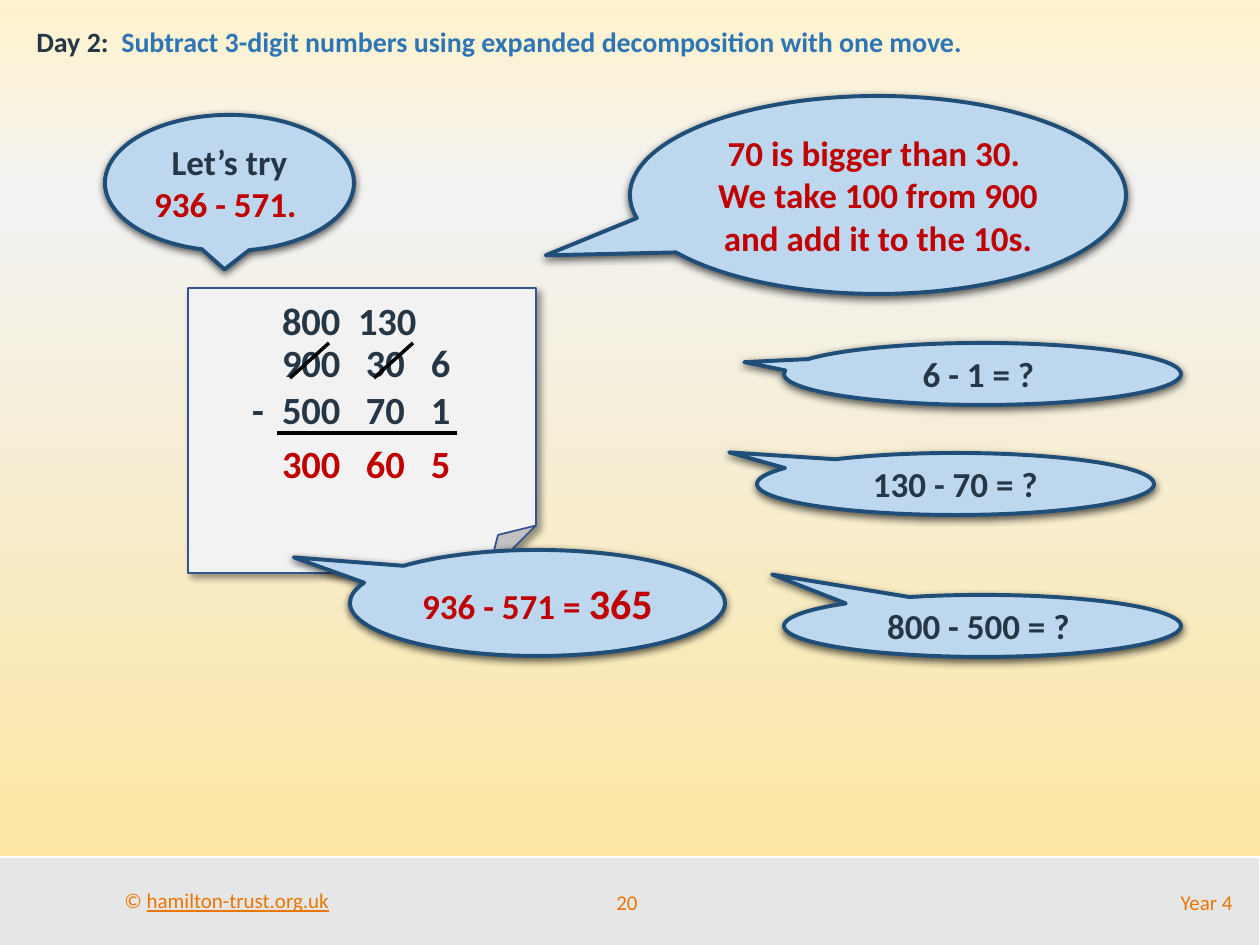
import lxml.etree
import pptx
import pptx.dml.color
import pptx.enum.shapes
import pptx.enum.text
import pptx.oxml.ns
import pptx.util

EMU_PER_PX = 914400 / 126
DARK, RED, BLUE, ORANGE = "253746", "C00000", "2E75B6", "EA7600"
ALIGN = pptx.enum.text.PP_ALIGN
ANCHOR = pptx.enum.text.MSO_ANCHOR
SHAPE = pptx.enum.shapes.MSO_SHAPE


def px(length):
    return pptx.util.Emu(round(length * EMU_PER_PX))


def rgb(color):
    return pptx.dml.color.RGBColor.from_string(color)


def add_xml(parent, tag, **attributes):
    values = {name: str(value) for name, value in attributes.items()}
    return lxml.etree.SubElement(parent, pptx.oxml.ns.qn(tag), values)


def add_run(paragraph, text, size=20, color=DARK, bold=True, underline=None):
    run = paragraph.add_run()
    run.text = text
    font = run.font
    font.name, font.size, font.bold = "Calibri", pptx.util.Pt(size), bold
    font.underline = underline
    font.color.rgb = rgb(color)


class SlideBuilder:
    callout_fill, callout_line = "BDD7EE", "1F4E79"

    def __init__(self, slide):
        self.slide = slide

    def background(self, stops, angle):
        fill = self.slide.background.fill
        fill.gradient()
        fill.gradient_angle = angle
        stop_list = next(self.slide.element.iter(pptx.oxml.ns.qn("a:gsLst")))
        for stop in list(stop_list):
            stop_list.remove(stop)
        for percent, color in stops:
            stop = add_xml(stop_list, "a:gs", pos=percent * 1000)
            add_xml(stop, "a:srgbClr", val=color)

    def fill_text(self, shape, paragraphs, align, anchor):
        """Each paragraph is a list of (text, format) pairs."""
        frame = shape.text_frame
        frame.vertical_anchor = anchor
        frame.word_wrap = True
        for index, runs in enumerate(paragraphs):
            paragraph = frame.add_paragraph() if index else frame.paragraphs[0]
            paragraph.alignment = align
            for text, style in runs:
                add_run(paragraph, text, **style)

    def text(self, box, *paragraphs, align=ALIGN.LEFT, anchor=ANCHOR.MIDDLE, inset=None):
        shape = self.slide.shapes.add_textbox(*map(px, box))
        if inset is not None:
            frame = shape.text_frame
            frame.margin_left = frame.margin_right = px(inset)
            frame.margin_top = frame.margin_bottom = px(inset)
        self.fill_text(shape, paragraphs, align, anchor)

    def shape(self, kind, box, fill, line, width=1, shadow=None):
        shape = self.slide.shapes.add_shape(kind, *map(px, box))
        shape.shadow.inherit = False
        shape.fill.solid()
        shape.fill.fore_color.rgb = rgb(fill)
        shape.line.color.rgb = rgb(line)
        shape.line.width = pptx.util.Pt(width)
        if shadow:
            opacity, blur, distance, angle = shadow
            effects = shape._element.spPr.find(pptx.oxml.ns.qn("a:effectLst"))
            outer = add_xml(effects, "a:outerShdw", blurRad=pptx.util.Pt(blur),
                            dist=pptx.util.Pt(distance), dir=angle * 60000, rotWithShape=0)
            color = add_xml(outer, "a:srgbClr", val="000000")
            add_xml(color, "a:alpha", val=opacity * 1000)
        return shape

    def callout(self, box, tip, *paragraphs):
        shape = self.shape(SHAPE.OVAL_CALLOUT, box, self.callout_fill, self.callout_line,
                           width=2.25, shadow=(63, 4.5, 1.5, 90))
        shape.adjustments[0], shape.adjustments[1] = tip
        self.fill_text(shape, paragraphs, ALIGN.CENTER, ANCHOR.MIDDLE)

    def line(self, *ends):
        straight = pptx.enum.shapes.MSO_CONNECTOR.STRAIGHT
        connector = self.slide.shapes.add_connector(straight, *map(px, ends))
        connector.line.color.rgb = rgb("000000")
        connector.line.width = pptx.util.Pt(2)
        add_xml(connector._element.spPr, "a:effectLst")


def main():
    presentation = pptx.Presentation()
    presentation.slide_width, presentation.slide_height = px(1260), px(945)
    slide = presentation.slides.add_slide(presentation.slide_layouts[6])
    builder = SlideBuilder(slide)
    builder.background([(0, "FFF2CC"), (21, "F2F2F2"), (100, "FFE699")], 270)

    # Footer
    footer = {"size": 12, "color": ORANGE, "bold": False}
    builder.shape(SHAPE.RECTANGLE, (-8, 857, 1268, 91), "E7E6E6", "FFFFFF")
    builder.text((112, 881, 232, 38),
                 [("© ", footer), ("hamilton-trust.org.uk", {**footer, "underline": True})])
    builder.text((577, 877, 100, 50), [("20", footer)], align=ALIGN.CENTER)
    builder.text((819, 877, 426, 50), [("Year 4", footer)], align=ALIGN.RIGHT)

    # Title
    builder.text((24, 18, 1202, 47),
                 [("Day 2:  ", {"size": 16}),
                  ("Subtract 3-digit numbers using expanded decomposition with one move.",
                   {"size": 16, "color": BLUE})], anchor=ANCHOR.TOP)

    # Expanded subtraction on a note: (row centre, colour, {left edge: number})
    builder.shape(SHAPE.FOLDED_CORNER, (188, 288, 348, 285), "F2F2F2", "325491",
                  shadow=(40, 4, 3, 45))
    rows = [
        (320, DARK, {282: "800", 358: "130"}),
        (362, DARK, {282: "900", 366: "30", 431: "6"}),
        (409, DARK, {252: "-", 282: "500", 366: "70", 431: "1"}),
        (463, RED, {282: "300", 366: "60", 431: "5"}),
    ]
    for centre, color, numbers in rows:
        for left, number in numbers.items():
            builder.text((left, centre - 24, 70, 48),
                         [(number, {"size": 22, "color": color})], inset=0)
    builder.line(277, 433, 457, 433)
    for left in (290, 374):
        builder.line(left, 378, left + 39, 343)

    # Speech bubbles
    red = {"color": RED}
    builder.callout((105, 115, 249, 136), (-0.02, 0.635),
                    [("Let’s try ", {}), ("936 - 571. ", red)])
    builder.callout((630, 96, 496, 198), (-0.67, 0.305),
                    [("70 is bigger than 30. ", red)],
                    [("We take 100 from 900 and add it to the 10s.", red)])
    questions = [
        (784, 343, (-0.6, -0.19), "6 - 1 = ? "),
        (757, 453, (-0.57, -0.51), "130 - 70 = ?"),
        (784, 595, (-0.53, -0.83), "800 - 500 = ? "),
    ]
    for left, top, tip, question in questions:
        builder.callout((left, top, 397, 62), tip, [(question, {})])
    builder.callout((350, 550, 375, 106), (-0.65, -0.43),
                    [("936 - 571 = ", red), ("365", {"size": 24, "color": RED})])

    presentation.save("out.pptx")


if __name__ == "__main__":
    main()
